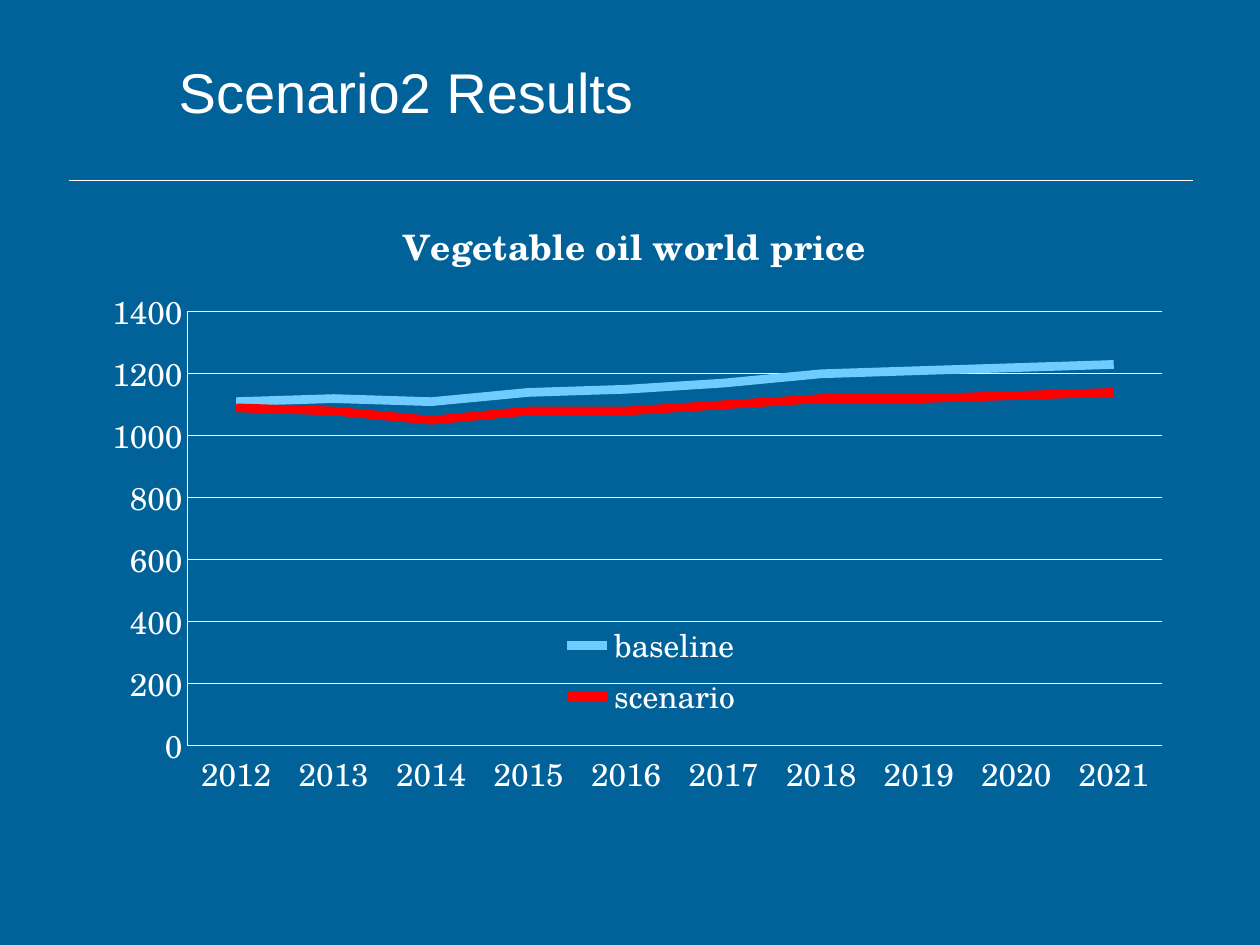
from typing import NamedTuple

from lxml.etree import SubElement
from pptx import Presentation
from pptx.chart.data import CategoryChartData
from pptx.dml.color import RGBColor
from pptx.enum.chart import XL_CHART_TYPE as ChartType
from pptx.enum.chart import XL_LEGEND_POSITION as LegendPosition
from pptx.enum.chart import XL_MARKER_STYLE as Marker
from pptx.enum.chart import XL_TICK_MARK as Tick
from pptx.enum.shapes import MSO_CONNECTOR as Connector
from pptx.enum.text import MSO_ANCHOR as Anchor
from pptx.oxml.ns import qn
from pptx.util import Inches, Pt

BLUE = RGBColor(0x00, 0x62, 0x99)
WHITE = RGBColor(0xFF, 0xFF, 0xFF)
SKY = RGBColor(0x70, 0xCC, 0xFF)
RED = RGBColor(0xFF, 0x00, 0x00)
CHART_FONT = "TeX Gyre Schola"


class PriceLine(NamedTuple):
    name: str
    color: RGBColor
    prices: list[int]


YEARS = [str(year) for year in range(2012, 2022)]
PRICE_LINES = [
    PriceLine("baseline", SKY, [1110, 1120, 1110, 1140, 1150, 1170, 1200, 1210, 1220, 1230]),
    PriceLine("scenario", RED, [1090, 1080, 1050, 1080, 1080, 1100, 1120, 1120, 1130, 1140]),
]


def style_line(line, color: RGBColor, width: float) -> None:
    line.color.rgb = color
    line.width = Pt(width)


def place(element, index: int, box: tuple[float, ...], inner: bool = False) -> None:
    """Give a chart part a manual layout in fractions of the chart size."""
    for old in element.findall(qn("c:layout")):
        element.remove(old)
    layout = SubElement(element, qn("c:layout"))
    element.insert(index, layout)
    manual = SubElement(layout, qn("c:manualLayout"))
    settings = [("layoutTarget", "inner")] if inner else []
    settings += [("xMode", "edge"), ("yMode", "edge"), *zip("xywh", box)]
    for tag, value in settings:
        SubElement(manual, qn(f"c:{tag}")).set("val", str(value))


def add_title(s) -> None:
    tf = s.shapes.add_textbox(Inches(1.32), Inches(0.14), Inches(8.68), Inches(1.17)).text_frame
    tf.word_wrap = True
    tf.vertical_anchor = Anchor.MIDDLE
    r = tf.paragraphs[0].add_run()
    r.text = "Scenario2 Results"
    r.font.name = "Arial"
    r.font.size = Pt(32)
    r.font.color.rgb = WHITE


def add_rule(s) -> None:
    y = Inches(1.43)
    rule = s.shapes.add_connector(Connector.STRAIGHT, Inches(0.55), y, Inches(9.47), y)
    style_line(rule.line, WHITE, 0.5)
    SubElement(rule.element.spPr, qn("a:effectLst"))


def add_price_chart(s) -> None:
    data = CategoryChartData()
    data.categories = YEARS
    for item in PRICE_LINES:
        data.add_series(item.name, item.prices)
    chart = s.shapes.add_chart(
        ChartType.LINE, Inches(0.75), Inches(1.5), Inches(8.58), Inches(5), data
    ).chart
    chart.font.name = CHART_FONT
    chart.font.size = Pt(18)
    chart.font.color.rgb = WHITE

    chart.has_title = True
    r = chart.chart_title.text_frame.paragraphs[0].add_run()
    r.text = "Vegetable oil world price"
    r.font.name = CHART_FONT
    r.font.size = Pt(20)
    r.font.bold = True
    r.font.color.rgb = WHITE

    for axis in (chart.category_axis, chart.value_axis):
        axis.major_tick_mark = axis.minor_tick_mark = Tick.NONE
        style_line(axis.format.line, WHITE, 0.75)
    chart.value_axis.minimum_scale = 0
    chart.value_axis.maximum_scale = 1400
    chart.value_axis.major_unit = 200
    chart.value_axis.has_major_gridlines = True
    style_line(chart.value_axis.major_gridlines.format.line, WHITE, 0.75)

    plot = chart.plots[0]
    plot.vary_by_categories = False
    for series, item in zip(plot.series, PRICE_LINES):
        series.smooth = False
        series.marker.style = Marker.NONE
        style_line(series.format.line, item.color, 5)
    place(plot._element.getparent(), 0, (0.086, 0.195, 0.902, 0.689), inner=True)

    chart.has_legend = True
    chart.legend.position = LegendPosition.RIGHT
    chart.legend.include_in_layout = False
    place(chart.legend._element, 1, (0.43, 0.68, 0.17, 0.17))


def main() -> None:
    prs = Presentation()
    prs.slide_width = Inches(10)
    prs.slide_height = Inches(7.5)
    s = prs.slides.add_slide(prs.slide_layouts[6])
    s.background.fill.solid()
    s.background.fill.fore_color.rgb = BLUE
    add_rule(s)
    add_price_chart(s)
    add_title(s)
    prs.save("out.pptx")


if __name__ == "__main__":
    main()
